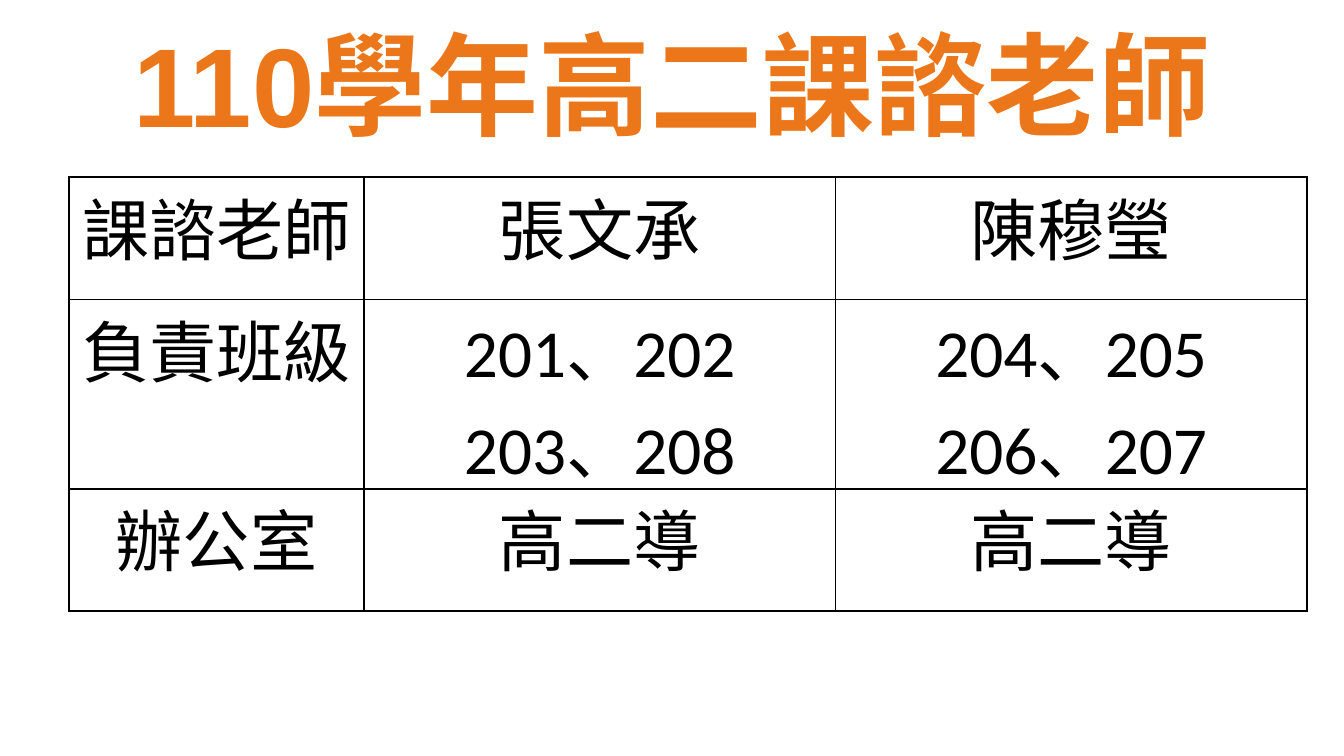
"""Build the slide listing the grade-two course advisers."""
from dataclasses import dataclass

from lxml.etree import SubElement
from pptx import Presentation
from pptx.dml.color import RGBColor
from pptx.enum.text import MSO_ANCHOR, PP_ALIGN
from pptx.oxml.ns import qn
from pptx.slide import Slide
from pptx.table import _Cell
from pptx.text.text import TextFrame
from pptx.util import Cm, Pt

COLORS = {"title": "EC771B", "text": "000000", "border": "000000"}


@dataclass(frozen=True)
class TextStyle:
    font: str
    size: int
    color: str
    bold: bool = False


@dataclass(frozen=True)
class AdviserRow:
    height: float
    texts: tuple[str, ...]


TITLE_STYLE = TextStyle("Arial", 60, "title", True)
CELL_STYLE = TextStyle("Calibri", 36, "text")
COLUMN_WIDTHS = (5.58, 8.91, 8.91)
ROWS = (
    AdviserRow(2.31, ("課諮老師", "張文承", "陳穆瑩")),
    AdviserRow(3.58, ("負責班級", "201、202\n203、208", "204、205\n206、207")),
    AdviserRow(2.31, ("辦公室", "高二導", "高二導")),
)


def write_text(frame: TextFrame, text: str, style: TextStyle) -> None:
    """Fill a frame with centred paragraphs in one style."""
    frame.text = text
    for paragraph in frame.paragraphs:
        paragraph.alignment = PP_ALIGN.CENTER
        paragraph.font.name = style.font
        paragraph.font.size = Pt(style.size)
        paragraph.font.bold = style.bold
        paragraph.font.color.rgb = RGBColor.from_string(COLORS[style.color])


def add_title(slide: Slide, text: str) -> None:
    """Add the heading across the slide."""
    title = slide.shapes.add_textbox(Cm(0), Cm(0.36), Cm(25.4), Cm(2.39))
    frame = title.text_frame
    frame.word_wrap = True
    frame.vertical_anchor = MSO_ANCHOR.MIDDLE
    write_text(frame, text, TITLE_STYLE)


def set_borders(cell: _Cell) -> None:
    """Draw a thin line on all four sides of a cell."""
    properties = cell._tc.get_or_add_tcPr()
    for position, side in enumerate(("lnL", "lnR", "lnT", "lnB")):
        line = SubElement(properties, qn(f"a:{side}"), w=str(Pt(1)))
        properties.insert(position, line)
        fill = SubElement(line, qn("a:solidFill"))
        SubElement(fill, qn("a:srgbClr"), val=COLORS["border"])


def format_cell(cell: _Cell, text: str) -> None:
    """Set the text, margins, fill and borders of a cell."""
    cell.margin_left = cell.margin_right = Cm(0.18)
    cell.margin_top = cell.margin_bottom = Cm(0)
    cell.fill.background()
    set_borders(cell)
    write_text(cell.text_frame, text, CELL_STYLE)


def add_adviser_table(slide: Slide) -> None:
    """Add the table of advisers, classes and offices."""
    table = slide.shapes.add_table(
        len(ROWS), len(COLUMN_WIDTHS), Cm(1.3), Cm(3.35),
        Cm(sum(COLUMN_WIDTHS)), Cm(sum(row.height for row in ROWS)),
    ).table
    table.first_row = table.horz_banding = False
    for column, width in zip(table.columns, COLUMN_WIDTHS):
        column.width = Cm(width)
    for table_row, row in zip(table.rows, ROWS):
        table_row.height = Cm(row.height)
        for cell, text in zip(table_row.cells, row.texts):
            format_cell(cell, text)


def main() -> None:
    """Create and save the presentation."""
    presentation = Presentation()
    presentation.slide_width = Cm(25.4)
    presentation.slide_height = Cm(14.29)
    slide = presentation.slides.add_slide(presentation.slide_layouts[6])
    add_title(slide, "110學年高二課諮老師")
    add_adviser_table(slide)
    presentation.save("out.pptx")


if __name__ == "__main__":
    main()
